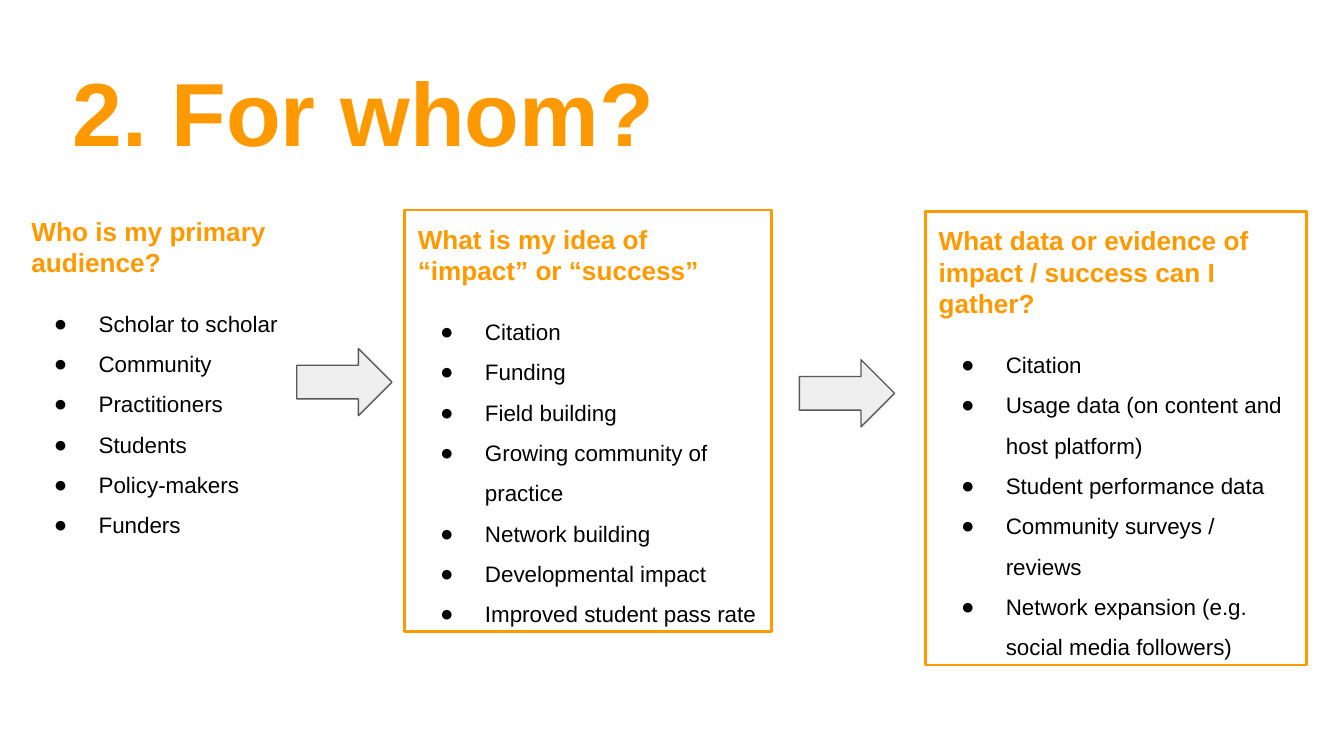
from lxml.etree import SubElement
from pptx import Presentation
from pptx.dml.color import RGBColor
from pptx.enum.shapes import MSO_SHAPE
from pptx.enum.text import MSO_ANCHOR, MSO_AUTO_SIZE, PP_ALIGN
from pptx.oxml.ns import qn
from pptx.util import Inches, Pt

PX = 9525
ORANGE = RGBColor(0xFF, 0x99, 0x00)
BLACK = RGBColor(0x00, 0x00, 0x00)
LIGHT_GRAY = RGBColor(0xEE, 0xEE, 0xEE)
DARK_GRAY = RGBColor(0x59, 0x59, 0x59)

FRAME_FORMAT = {
    "word_wrap": True,
    "auto_size": MSO_AUTO_SIZE.NONE,
    "vertical_anchor": MSO_ANCHOR.TOP,
    "margin_left": Inches(0.1),
    "margin_top": Inches(0.1),
    "margin_right": Inches(0.1),
    "margin_bottom": Inches(0.1),
}
TITLE_FONT = {"name": "Arial", "size": Pt(48), "bold": True}
HEADING_FONT = {"name": "Arial", "size": Pt(14), "bold": True}
ITEM_FONT = {"name": "Arial", "size": Pt(12), "bold": False}


def write_paragraph(paragraph, text, font_format, color):
    paragraph.alignment = PP_ALIGN.LEFT
    run = paragraph.add_run()
    run.text = text
    for name, value in font_format.items():
        setattr(run.font, name, value)
    run.font.color.rgb = color


def add_bullet(paragraph):
    properties = paragraph._p.get_or_add_pPr()
    properties.set("marL", str(48 * PX))
    properties.set("indent", str(-32 * PX))
    bullet_color = SubElement(properties, qn("a:buClr"))
    SubElement(bullet_color, qn("a:srgbClr"), val=str(BLACK))
    SubElement(properties, qn("a:buFont"), typeface="Arial")
    SubElement(properties, qn("a:buChar"), char="●")


presentation = Presentation()
presentation.slide_width = 960 * PX
presentation.slide_height = 540 * PX
slide = presentation.slides.add_slide(presentation.slide_layouts[5])

title = slide.shapes.title
title.left, title.top, title.width, title.height = 42 * PX, 31 * PX, 714 * PX, 60 * PX
for name, value in FRAME_FORMAT.items():
    setattr(title.text_frame, name, value)
write_paragraph(title.text_frame.paragraphs[0], "2. For whom?", TITLE_FONT, ORANGE)

columns = [
    ((13, 144, 215, 243), False, "Who is my primary audience?",
     ["Scholar to scholar", "Community", "Practitioners", "Students",
      "Policy-makers", "Funders"]),
    ((289, 150, 262, 301), True, "What is my idea of “impact” or “success”",
     ["Citation", "Funding", "Field building", "Growing community of practice",
      "Network building", "Developmental impact", "Improved student pass rate"]),
    ((661, 151, 272, 324), True,
     "What data or evidence of impact / success can I gather?",
     ["Citation", "Usage data (on content and host platform)",
      "Student performance data", "Community surveys / reviews",
      "Network expansion (e.g. social media followers)"]),
]
for box, outlined, heading, items in columns:
    position = [length * PX for length in box]
    if outlined:
        shape = slide.shapes.add_shape(MSO_SHAPE.RECTANGLE, *position)
        shape.shadow.inherit = False
        shape.fill.background()
        shape.line.color.rgb = ORANGE
        shape.line.width = Pt(1.5)
    else:
        shape = slide.shapes.add_textbox(*position)
    frame = shape.text_frame
    for name, value in FRAME_FORMAT.items():
        setattr(frame, name, value)
    write_paragraph(frame.paragraphs[0], heading, HEADING_FONT, ORANGE)
    for index, item in enumerate(items):
        paragraph = frame.add_paragraph()
        paragraph.line_spacing = 1.5
        paragraph.space_before = Pt(10 if index == 0 else 0)
        add_bullet(paragraph)
        write_paragraph(paragraph, item, ITEM_FONT, BLACK)

for left, top in [(212, 249), (571, 257)]:
    arrow = slide.shapes.add_shape(
        MSO_SHAPE.RIGHT_ARROW, left * PX, top * PX, 68 * PX, 48 * PX)
    arrow.shadow.inherit = False
    arrow.fill.solid()
    arrow.fill.fore_color.rgb = LIGHT_GRAY
    arrow.line.color.rgb = DARK_GRAY
    arrow.line.width = Pt(0.75)

presentation.save("out.pptx")
